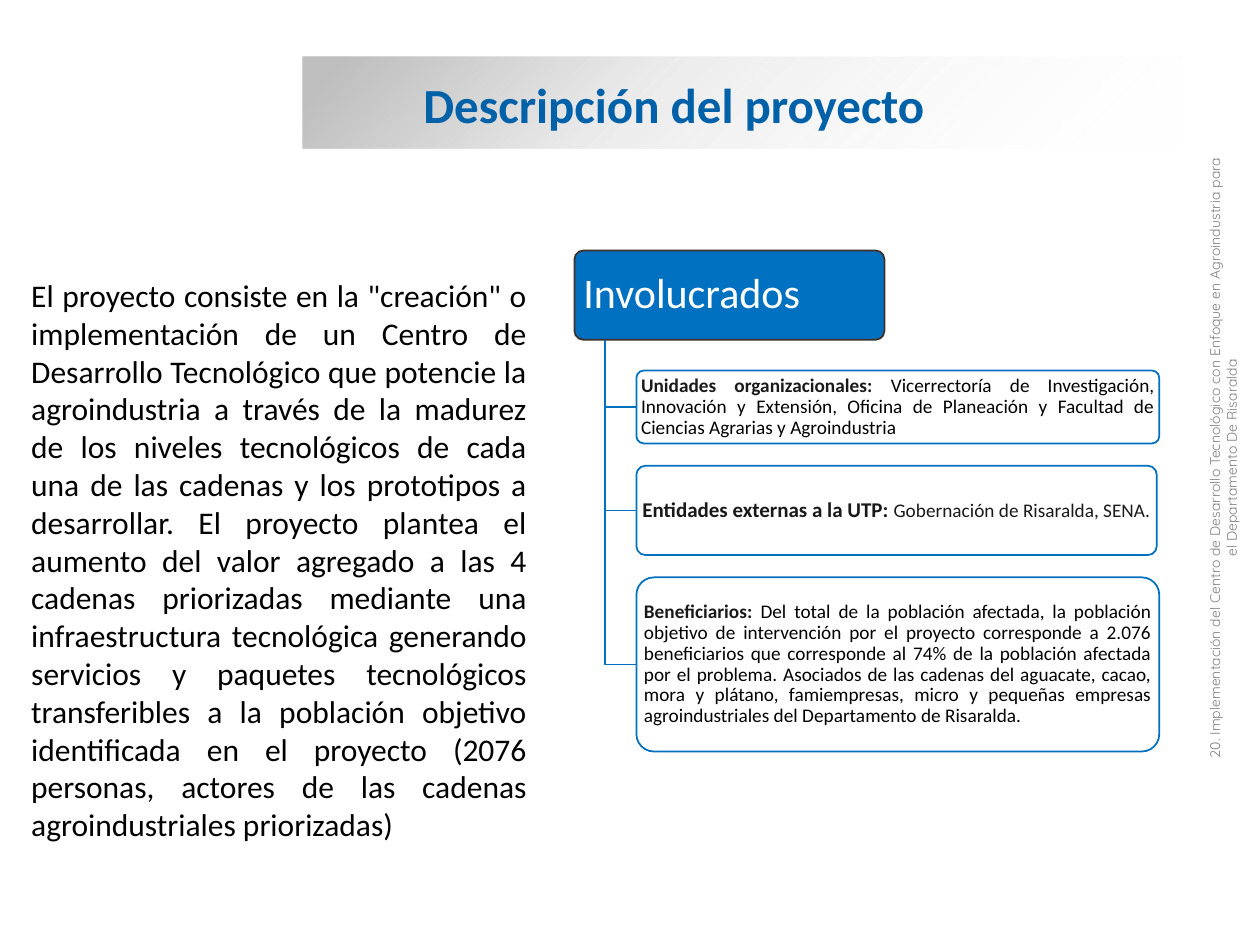
from lxml import etree
from pptx import Presentation
from pptx import util as u
from pptx.dml.color import RGBColor
from pptx.enum import shapes as sh, text as tx
from pptx.oxml.ns import qn

BLUE, DARK, BLACK, WHITE = "0070C0", "191919", "000000", "FFFFFF"
TITLE = "Descripción del proyecto"
SUMMARY = (
    'El proyecto consiste en la "creación" o implementación de un Centro de Desarrollo Tecnológico '
    "que potencie la agroindustria a través de la madurez de los niveles tecnológicos de cada una de "
    "las cadenas y los prototipos a desarrollar. El proyecto plantea el aumento del valor agregado a "
    "las 4 cadenas priorizadas mediante una infraestructura tecnológica generando servicios y paquetes "
    "tecnológicos transferibles a la población objetivo identificada en el proyecto (2076 personas, "
    "actores de las cadenas agroindustriales priorizadas)"
)
SIDE_NOTE = (
    "20. Implementación del Centro de Desarrollo Tecnológico con Enfoque en Agroindustria "
    "para el Departamento De Risaralda"
)
HEADING = "Involucrados"
CARDS = [
    dict(label="Unidades organizacionales: ", label_size=11, color=BLACK, width=10.54, height=1.47,
         inset=0.05,
         detail="Vicerrectoría de Investigación, Innovación y Extensión, Oficina de Planeación y "
                "Facultad de Ciencias Agrarias y Agroindustria"),
    dict(label="Entidades externas a la UTP: ", label_size=12, color=DARK, width=10.49, height=1.8,
         inset=0.07,
         detail="Gobernación de Risaralda, SENA."),
    dict(label="Beneficiarios: ", label_size=11, color=BLACK, width=10.54, height=3.51,
         inset=0.05,
         detail="Del total de la población afectada, la población objetivo de intervención por el "
                "proyecto corresponde a 2.076 beneficiarios que corresponde al 74% de la población "
                "afectada por el problema. Asociados de las cadenas del aguacate, cacao, mora y plátano, "
                "famiempresas, micro y pequeñas empresas agroindustriales del Departamento de Risaralda."),
]
BAND_STOPS = [(5, "BFBFBF", 100), (37, "BFBFBF", 31), (100, WHITE, 0)]
HEAD_LEFT, HEAD_TOP, HEAD_WIDTH, HEAD_HEIGHT = 11.58, 5.05, 6.25, 1.8
TRUNK_X, CARD_LEFT, FIRST_CARD_TOP, CARD_GAP = 12.2, 12.83, 7.47, 0.45


def rgb(code):
    return RGBColor.from_string(code)


def cm(*lengths):
    return [u.Cm(length) for length in lengths]


def write(frame, runs, align, frame_format=None, paragraph_format=None):
    for name, value in dict(word_wrap=True, **(frame_format or {})).items():
        setattr(frame, name, value)
    paragraph = frame.paragraphs[0]
    for name, value in dict(alignment=align, **(paragraph_format or {})).items():
        setattr(paragraph, name, value)
    for words, size, color, bold, font in runs:
        run = paragraph.add_run()
        run.text = words
        for name, value in dict(name=font, size=u.Pt(size), bold=bold).items():
            setattr(run.font, name, value)
        run.font.color.rgb = rgb(color)


def outline(shape, color):
    shape.shadow.inherit = False
    shape.line.color.rgb = rgb(color)
    shape.line.width = u.Pt(1)


def rounded_box(area, fill, line, runs, align, side, edge):
    box = slide.shapes.add_shape(sh.MSO_SHAPE.ROUNDED_RECTANGLE, *cm(*area))
    box.adjustments[0] = 0.1
    box.fill.solid()
    box.fill.fore_color.rgb = rgb(fill)
    outline(box, line)
    insets = dict(margin_left=u.Cm(side), margin_right=u.Cm(side),
                  margin_top=u.Cm(edge), margin_bottom=u.Cm(edge),
                  vertical_anchor=tx.MSO_ANCHOR.MIDDLE)
    write(box.text_frame, runs, align, insets, dict(line_spacing=0.9))


def branch(end_y):
    builder = slide.shapes.build_freeform(*cm(TRUNK_X, HEAD_TOP + HEAD_HEIGHT))
    builder.add_line_segments([cm(TRUNK_X, end_y), cm(CARD_LEFT, end_y)], close=False)
    elbow = builder.convert_to_shape()
    elbow.fill.background()
    outline(elbow, BLUE)


def fade(shape, stops, angle):
    shape.fill.gradient()
    gradient = shape._element.spPr.find(qn("a:gradFill"))
    for child in list(gradient):
        gradient.remove(child)
    stop_list = etree.SubElement(gradient, qn("a:gsLst"))
    for position, color, opacity in stops:
        stop = etree.SubElement(stop_list, qn("a:gs"), pos=str(position * 1000))
        tone = etree.SubElement(stop, qn("a:srgbClr"), val=color)
        etree.SubElement(tone, qn("a:alpha"), val=str(opacity * 1000))
    etree.SubElement(gradient, qn("a:lin"), ang=str(angle * 60000), scaled="0")


deck = Presentation()
deck.slide_width, deck.slide_height = cm(25.4, 19.05)
slide = deck.slides.add_slide(deck.slide_layouts[5])

band = slide.shapes.add_shape(sh.MSO_SHAPE.RECTANGLE, *cm(6.1, 1.14, 17.73, 1.85))
band.shadow.inherit = False
band.line.fill.background()
fade(band, BAND_STOPS, 45)

title = slide.shapes.title
title.left, title.top, title.width, title.height = cm(8.28, 1.37, 15.75, 1.45)
title._element.addprevious(band._element)
write(title.text_frame, [(TITLE, 28, "0060A8", True, "Calibri")], tx.PP_ALIGN.LEFT,
      dict(vertical_anchor=tx.MSO_ANCHOR.MIDDLE, auto_size=tx.MSO_AUTO_SIZE.NONE))

rounded_box((HEAD_LEFT, HEAD_TOP, HEAD_WIDTH, HEAD_HEIGHT), BLUE, "3F3029",
            [(HEADING, 24, WHITE, False, "Calibri")], tx.PP_ALIGN.LEFT, 0.13, 0.08)

top = FIRST_CARD_TOP
for card in CARDS:
    branch(top + card["height"] / 2)
    runs = [(card["label"], card["label_size"], DARK, True, "Calibri"),
            (card["detail"], 11, card["color"], False, "Calibri")]
    rounded_box((CARD_LEFT, top, card["width"], card["height"]), WHITE, BLUE, runs,
                tx.PP_ALIGN.JUSTIFY, card["inset"], 0.05)
    top += card["height"] + CARD_GAP

summary = slide.shapes.add_textbox(*cm(0.38, 5.44, 10.49, 11.79))
write(summary.text_frame, [(SUMMARY, 18, BLACK, False, "Calibri")], tx.PP_ALIGN.JUSTIFY)

side_note = slide.shapes.add_textbox(*cm(18.26, 8.76, 12.8, 0.94))
side_note.rotation = 270
write(side_note.text_frame, [(SIDE_NOTE, 8, "808080", False, "Quicksand")], tx.PP_ALIGN.CENTER)

deck.save("out.pptx")
